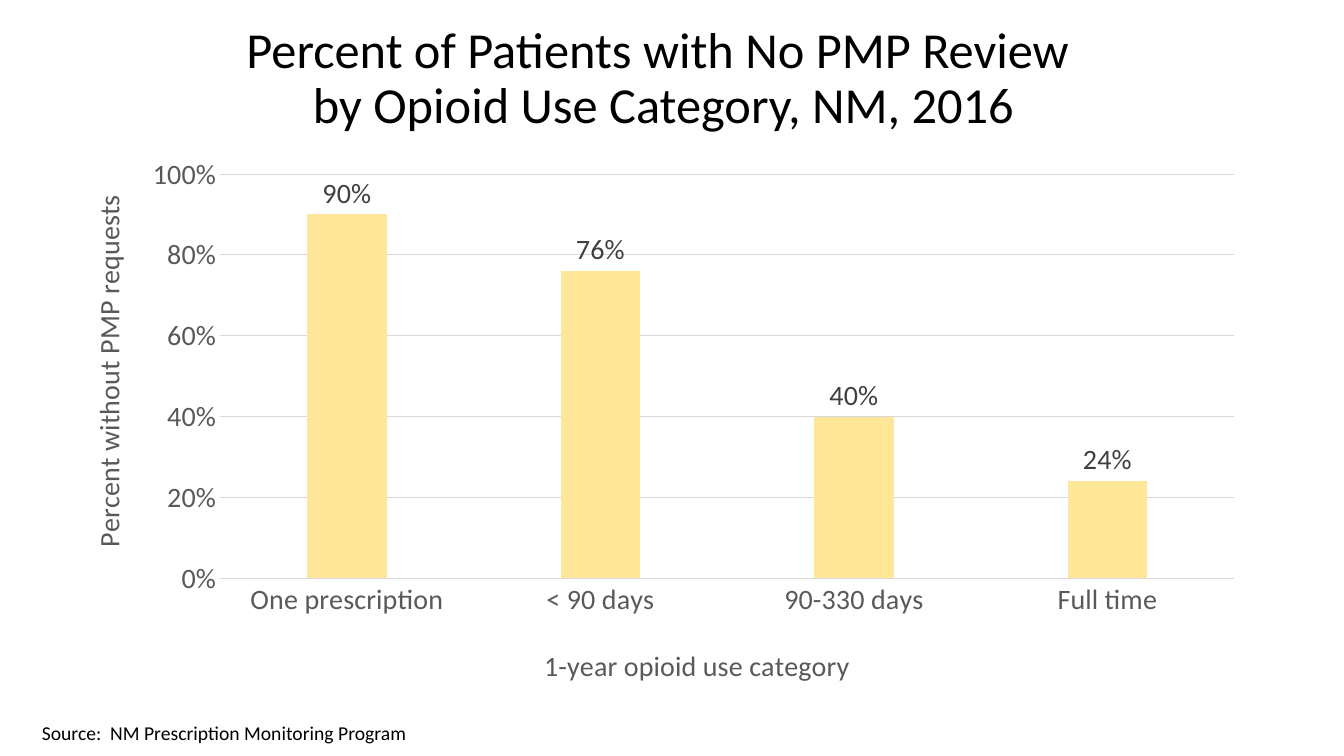
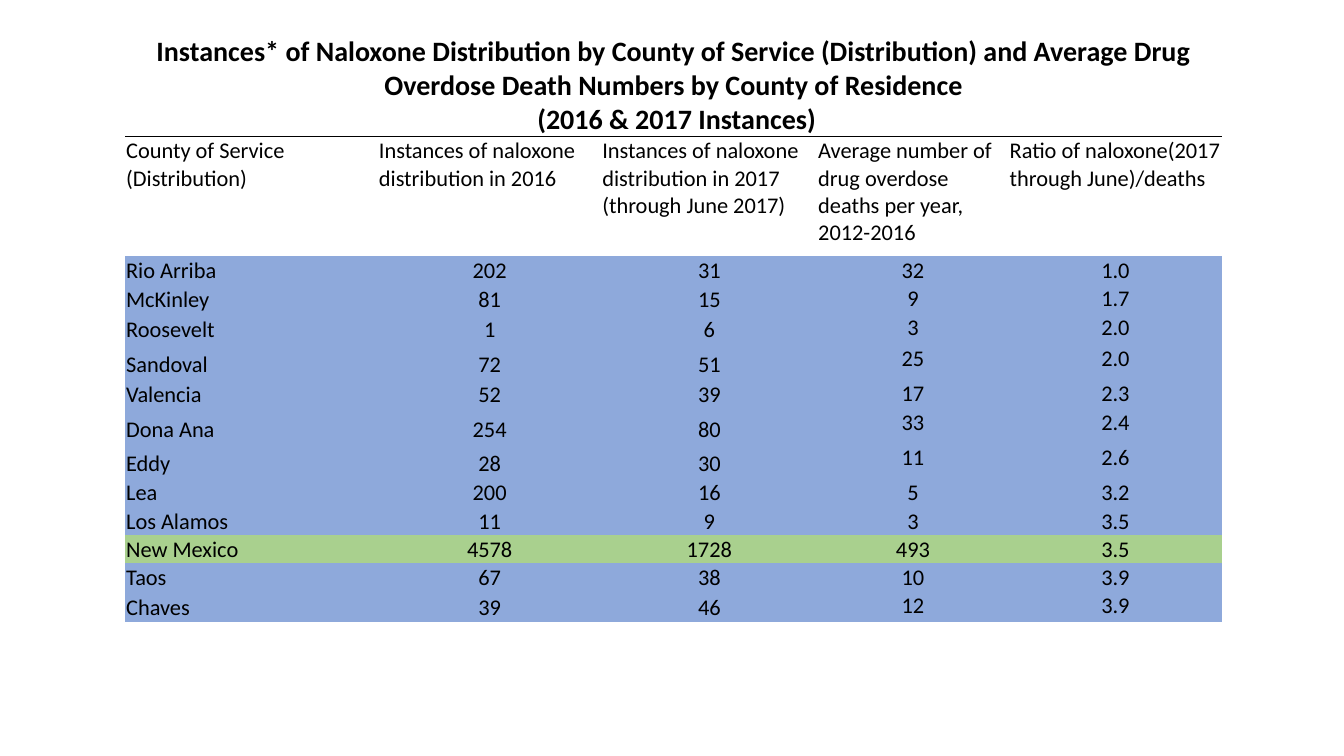
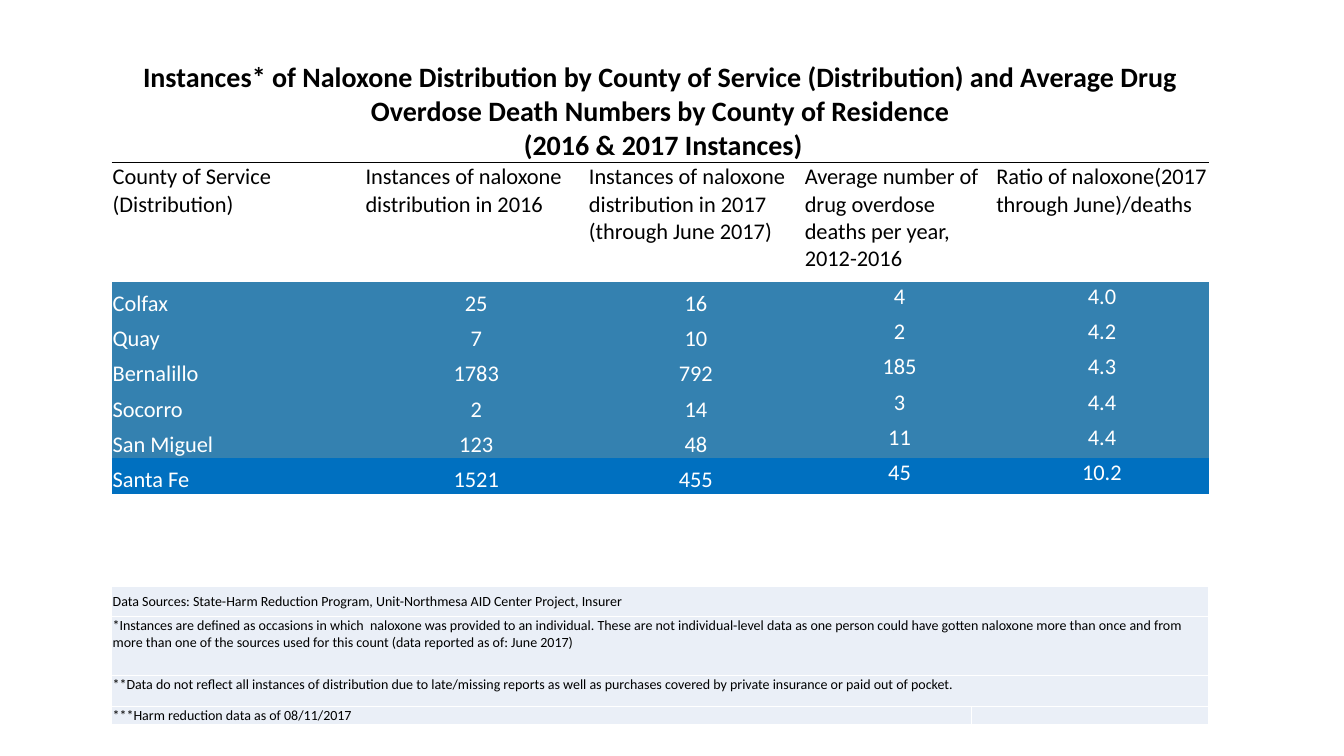
from dataclasses import dataclass

from lxml import etree
from pptx import Presentation, util as u
from pptx.chart.data import CategoryChartData
from pptx.dml.color import RGBColor
from pptx.enum import chart as charts, text as texts
from pptx.oxml import ns


@dataclass(frozen=True)
class Theme:
    font: str = "Calibri"
    black: str = "000000"
    white: str = "FFFFFF"
    axis: str = "595959"
    label: str = "404040"
    grid: str = "D9D9D9"
    bar: str = "FFE699"
    low: str = "8EA9DB"
    state: str = "A9D08E"
    high: str = "3481B0"
    top: str = "0070C0"
    note: str = "EAEFF7"
    title_size: int = 36
    large: int = 20
    body: int = 16
    source: int = 14
    small: int = 10


@dataclass(frozen=True)
class Box:
    """A region in grid units: the slide is 160 columns by 90 rows."""
    left: float
    top: float
    width: float
    height: float

    def place(self):
        return [grid(n) for n in (self.left, self.top, self.width, self.height)]

    def below(self, offset, height):
        return Box(self.left, self.top + offset, self.width, height)


THEME = Theme()
COLUMNS, ROWS = 160, 90
WIDTH, HEIGHT = u.Inches(13.33), u.Inches(7.5)
PLAIN_TABLE = "{2D5ABB26-0587-4C30-8999-92F81FD0307C}"
CENTER = texts.PP_ALIGN.CENTER
BOTTOM = texts.MSO_ANCHOR.BOTTOM
MIDDLE = texts.MSO_ANCHOR.MIDDLE
TOP = texts.MSO_ANCHOR.TOP

COUNTY_COLUMNS = [30.1, 26.6, 25.7, 22.8, 25.4]
HEADING_ROWS = [12.24, 12.96]
HEADING = (
    "Instances* of Naloxone Distribution by County of Service (Distribution) and "
    "Average Drug Overdose Death Numbers by County of Residence\n"
    " (2016 & 2017 Instances)"
)
COLUMN_HEADS = [
    "County of Service (Distribution)",
    "Instances of naloxone distribution in 2016",
    "Instances of naloxone distribution in 2017 (through June 2017)",
    "Average number of drug overdose deaths per year, 2012-2016",
    "Ratio of naloxone(2017 through June)/deaths",
]
LOW_COUNTIES = [
    ("Rio Arriba", "202", "31", "32", "1.0"),
    ("McKinley", "81", "15", "9", "1.7"),
    ("Roosevelt", "1", "6", "3", "2.0"),
    ("Sandoval", "72", "51", "25", "2.0"),
    ("Valencia", "52", "39", "17", "2.3"),
    ("Dona Ana", "254", "80", "33", "2.4"),
    ("Eddy", "28", "30", "11", "2.6"),
    ("Lea", "200", "16", "5", "3.2"),
    ("Los Alamos", "11", "9", "3", "3.5"),
    ("New Mexico", "4578", "1728", "493", "3.5"),
    ("Taos", "67", "38", "10", "3.9"),
    ("Chaves", "39", "46", "12", "3.9"),
]
LOW_ROWS = [3.36, 3.48, 3.6, 4.2, 3.48, 4.2, 4.08, 3.48, 3.36, 3.36, 3.36, 3.6]
HIGH_COUNTIES = [
    ("Colfax", "25", "16", "4", "4.0"),
    ("Quay", "7", "10", "2", "4.2"),
    ("Bernalillo", "1783", "792", "185", "4.3"),
    ("Socorro", "2", "14", "3", "4.4"),
    ("San Miguel", "123", "48", "11", "4.4"),
    ("Santa Fe", "1521", "455", "45", "10.2"),
]
HIGH_ROWS = [4.2] * len(HIGH_COUNTIES)
NOTES = [
    ("Data Sources: State-Harm Reduction Program, Unit-Northmesa AID Center "
     "Project, Insurer", 3.6, MIDDLE),
    ("*Instances are defined as occasions in which  naloxone was provided to an "
     "individual. These are not individual-level data as one person could have "
     "gotten naloxone more than once and from more than one of the sources used "
     "for this count (data reported as of: June 2017)", 7, TOP),
    ("**Data do not reflect all instances of distribution due to late/missing "
     "reports as well as purchases covered by private insurance or paid out of "
     "pocket.", 3.72, TOP),
    ("***Harm reduction data as of 08/11/2017", 1.92, BOTTOM),
]


def grid(units):
    return round(units * WIDTH / COLUMNS)


def color(code):
    return RGBColor.from_string(code)


def style_font(font, size, code=THEME.black, bold=False):
    font.name, font.size, font.bold = THEME.font, u.Pt(size), bold
    font.color.rgb = color(code)


def write_text(frame, text, size=THEME.body, code=THEME.black, bold=False,
               align=None, spacing=None):
    """Write one paragraph for each line of text."""
    frame.word_wrap = True
    for number, line in enumerate(text.split("\n")):
        paragraph = frame.add_paragraph() if number else frame.paragraphs[0]
        paragraph.alignment = align
        paragraph.line_spacing = spacing
        if line:
            run = paragraph.add_run()
            run.text = line
            style_font(run.font, size, code, bold)
        else:
            end = etree.SubElement(paragraph._p, ns.qn("a:endParaRPr"))
            end.set("sz", str(size * 100))


def add_text(slide, box, text, **style):
    frame = slide.shapes.add_textbox(*box.place()).text_frame
    write_text(frame, text, **style)


def set_borders(cell, sides, code):
    """Draw 1 pt lines on the given sides, named in the order L, R, T, B."""
    properties = cell._tc.get_or_add_tcPr()
    for position, side in enumerate(sides):
        line = etree.Element(ns.qn(f"a:ln{side}"), w=str(u.Pt(1)))
        fill = etree.SubElement(line, ns.qn("a:solidFill"))
        etree.SubElement(fill, ns.qn("a:srgbClr"), val=code)
        properties.insert(position, line)


def fill_cell(cell, text, fill=None, anchor=TOP, **style):
    cell.margin_left = cell.margin_right = cell.margin_top = u.Inches(0.01)
    cell.margin_bottom = 0
    cell.vertical_anchor = anchor
    if fill:
        cell.fill.solid()
        cell.fill.fore_color.rgb = color(fill)
    else:
        cell.fill.background()
    write_text(cell.text_frame, text, **style)


def add_plain_table(slide, box, columns, rows):
    frame = slide.shapes.add_table(len(rows), len(columns), *box.place())
    table = frame.table
    table.first_row = table.horz_banding = False
    table._tbl.tblPr.find(ns.qn("a:tableStyleId")).text = PLAIN_TABLE
    for column, width in zip(table.columns, columns):
        column.width = grid(width)
    for row, height in zip(table.rows, rows):
        row.height = grid(height)
    return table


def add_heading(slide, box):
    table = add_plain_table(slide, box, COUNTY_COLUMNS, HEADING_ROWS)
    title = table.cell(0, 0)
    title.merge(table.cell(0, len(COLUMN_HEADS) - 1))
    fill_cell(title, HEADING, size=THEME.large, bold=True, align=CENTER)
    for column, head in enumerate(COLUMN_HEADS):
        fill_cell(table.cell(1, column), head)
        set_borders(table.cell(0, column), "B", THEME.black)
        set_borders(table.cell(1, column), "T", THEME.black)


def add_counties(slide, box, counties, rows, fill, special, code=THEME.black):
    """Add county rows; special maps a county name to its own fill."""
    table = add_plain_table(slide, box, COUNTY_COLUMNS, rows)
    for row, county in enumerate(counties):
        for column, value in enumerate(county):
            fill_cell(table.cell(row, column), value,
                      fill=special.get(county[0], fill), code=code,
                      anchor=BOTTOM if column < 3 else TOP,
                      align=CENTER if column else None)


def add_notes(slide, box):
    rows = [height for _, height, _ in NOTES]
    table = add_plain_table(slide, box, [102.4, 28.2], rows)
    for row, (note, _, anchor) in enumerate(NOTES):
        for column, text in enumerate((note, "")):
            cell = table.cell(row, column)
            fill_cell(cell, text, fill=THEME.note, anchor=anchor, size=THEME.small)
            set_borders(cell, "LRTB", THEME.white)
        if row < len(NOTES) - 1:
            table.cell(row, 0).merge(table.cell(row, 1))


def set_layout(parent, **shares):
    """Fix a chart part at the given shares of the chart's size."""
    layout = parent.find(ns.qn("c:layout"))
    if layout is None:
        layout = etree.Element(ns.qn("c:layout"))
        parent.insert(0, layout)
    manual = etree.SubElement(layout, ns.qn("c:manualLayout"))
    settings = {"xMode": "edge", "yMode": "edge", **shares}
    if "w" in shares:
        settings = {"layoutTarget": "inner", **settings}
    for name, value in settings.items():
        etree.SubElement(manual, ns.qn(f"c:{name}"), val=str(value))


def style_axis(axis, title, x, y, rotation=0):
    axis.major_tick_mark = axis.minor_tick_mark = charts.XL_TICK_MARK.NONE
    style_font(axis.tick_labels.font, THEME.large, THEME.axis)
    frame = axis.axis_title.text_frame
    write_text(frame, title, size=THEME.large, code=THEME.axis)
    frame._txBody.bodyPr.set("rot", str(rotation * 60000))
    set_layout(axis.axis_title._element, x=x, y=y)


def style_line(line):
    line.color.rgb = color(THEME.grid)
    line.width = u.Pt(0.75)


def add_review_chart(slide, box):
    data = CategoryChartData(number_format="0%")
    data.categories = ["One prescription", "< 90 days", "90-330 days", "Full time"]
    data.add_series("Series 1", [0.9, 0.76, 0.4, 0.24])
    kind = charts.XL_CHART_TYPE.COLUMN_CLUSTERED
    chart = slide.shapes.add_chart(kind, *box.place(), data).chart
    chart.has_legend = chart.has_title = False
    style_font(chart.font, THEME.large)
    set_layout(chart._chartSpace.chart.plotArea, x=0.134, y=0.051, w=0.846, h=0.736)

    style_axis(chart.category_axis, "1-year opioid use category", 0.4, 0.9)
    style_line(chart.category_axis.format.line)
    values = chart.value_axis
    style_axis(values, "Percent without PMP requests", 0.02, 0.08, rotation=-90)
    values.minimum_scale, values.maximum_scale, values.major_unit = 0, 1, 0.2
    values.tick_labels.number_format = "0%"
    values.tick_labels.number_format_is_linked = False
    values.format.line.fill.background()
    style_line(values.major_gridlines.format.line)

    plot = chart.plots[0]
    plot.gap_width, plot.overlap, plot.vary_by_categories = 219, -27, False
    fill = plot.series[0].format.fill
    fill.solid()
    fill.fore_color.rgb = color(THEME.bar)
    plot.has_data_labels = True
    labels = plot.data_labels
    labels.show_value = True
    labels.number_format, labels.number_format_is_linked = "0%", False
    labels.position = charts.XL_LABEL_POSITION.OUTSIDE_END
    style_font(labels.font, THEME.large, THEME.label)


def build_review_slide(slide):
    title = ("Percent of Patients with No PMP Review \n"
             "by Opioid Use Category, NM, 2016")
    add_text(slide, Box(10, 2.4, 138, 17.4), title, size=THEME.title_size,
             align=CENTER, spacing=0.9)
    add_review_chart(slide, Box(7.1, 17.4, 142.7, 65.4))
    add_text(slide, Box(3.8, 85.2, 125.2, 4.1),
             "Source:  NM Prescription Monitoring Program", size=THEME.source)


def build_county_slide(slide, left, top, counties, rows, *colors):
    """Stack the shared heading and a county table; return the heading's box."""
    heading = Box(left, top, sum(COUNTY_COLUMNS), sum(HEADING_ROWS))
    add_counties(slide, heading.below(26.5, sum(rows)), counties, rows, *colors)
    add_heading(slide, heading)
    return heading


def main():
    presentation = Presentation()
    presentation.slide_width, presentation.slide_height = WIDTH, HEIGHT
    blank = presentation.slide_layouts[6]
    review, low, high = (presentation.slides.add_slide(blank) for _ in range(3))
    build_review_slide(review)
    build_county_slide(low, 14.9, 4, LOW_COUNTIES, LOW_ROWS,
                       THEME.low, {"New Mexico": THEME.state})
    heading = build_county_slide(high, 13.3, 7.1, HIGH_COUNTIES, HIGH_ROWS,
                                 THEME.high, {"Santa Fe": THEME.top}, THEME.white)
    add_notes(high, heading.below(62.74, sum(height for _, height, _ in NOTES)))
    presentation.save("out.pptx")


if __name__ == "__main__":
    main()
